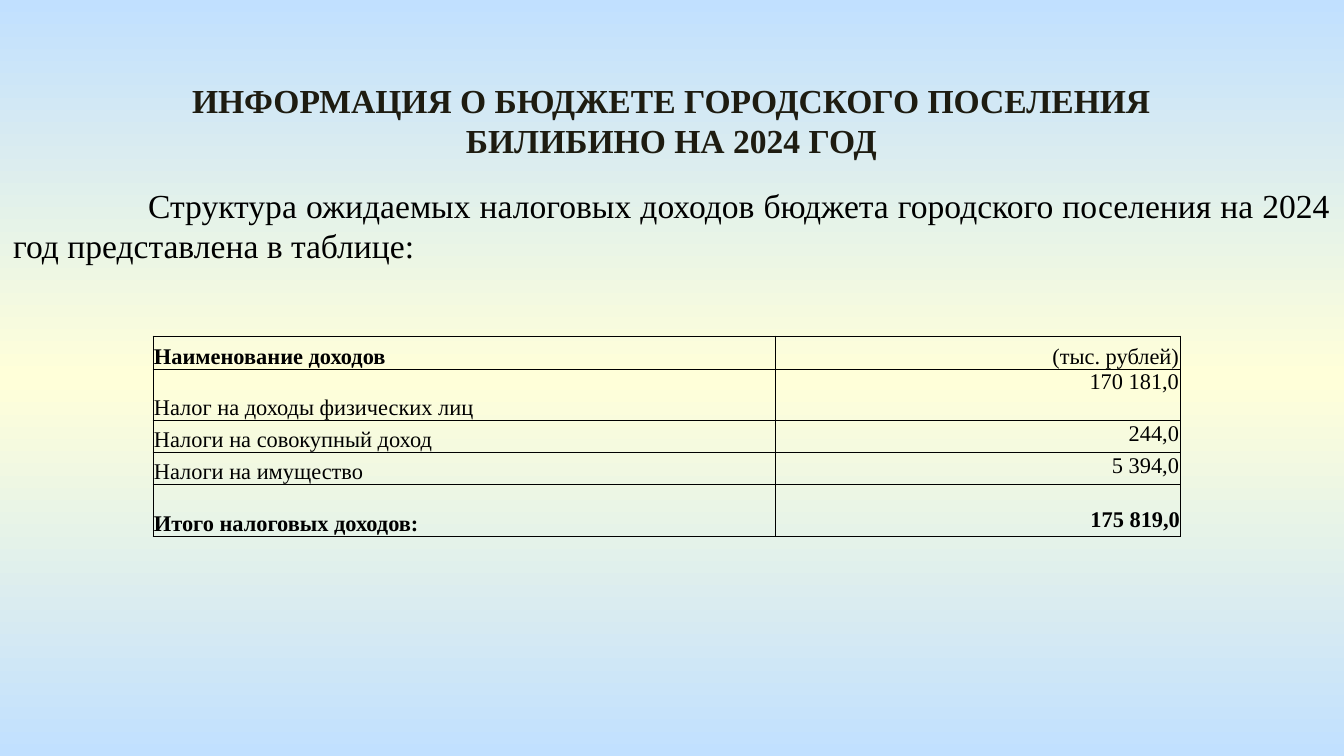
from lxml import etree
from pptx import Presentation
from pptx import util as u
from pptx.dml.color import RGBColor
from pptx.enum import text
from pptx.oxml.ns import qn

# Content
TITLE = "ИНФОРМАЦИЯ О БЮДЖЕТЕ ГОРОДСКОГО ПОСЕЛЕНИЯ БИЛИБИНО НА 2024 ГОД"
INTRO = ("Структура ожидаемых налоговых доходов бюджета городского поселения "
         "на 2024 год представлена в таблице:")
ROWS = [
    ("Наименование доходов", "(тыс. рублей)"),
    ("Налог на доходы физических лиц", "170 181,0"),
    ("Налоги на совокупный доход", "244,0"),
    ("Налоги на имущество", "5 394,0"),
    ("Итого налоговых доходов:", "175 819,0"),
]
BOLD = {(0, 0), (4, 0), (4, 1)}

# Layout in px, 1344 px to the slide width
COLS = [622, 405]
HEIGHTS = [33, 52, 32, 32, 52]
C = {"sky": "C1E0FF", "cream": "FFFFD9", "title": "1E1C11", "ink": "000000"}
FONT = "Times New Roman"
A = text.PP_ALIGN
V = text.MSO_ANCHOR


def px(n):
    return u.Emu(round(n * 914400 / 134.4))


def place(sp, left, top, width, height):
    box = dict(left=left, top=top, width=width, height=height)
    for name, value in box.items():
        setattr(sp, name, px(value))


def write(tf, words, size, align, color="ink", bold=False):
    p = tf.paragraphs[0]
    p.alignment = align
    r = p.add_run()
    r.text = words
    for name, value in dict(name=FONT, size=u.Pt(size), bold=bold).items():
        setattr(r.font, name, value)
    r.font.color.rgb = RGBColor.from_string(C[color])
    return p


def add_color(parent, color):
    etree.SubElement(parent, qn("a:srgbClr"), val=C[color])


def add_borders(cell):
    tcPr = cell._tc.get_or_add_tcPr()
    for i, side in enumerate(("lnL", "lnR", "lnT", "lnB")):
        ln = etree.Element(qn("a:" + side), w=str(u.Pt(0.5)))
        add_color(etree.SubElement(ln, qn("a:solidFill")), "ink")
        tcPr.insert(i, ln)


prs = Presentation()
prs.slide_width, prs.slide_height = px(1344), px(756)
s = prs.slides.add_slide(prs.slide_layouts[5])

# Background gradient
fill = s.background.fill
fill.gradient()
fill.gradient_angle = 90
stops = s.background._cSld.find(".//" + qn("a:gsLst"))
for old in list(stops):
    stops.remove(old)
for percent, color in ((0, "sky"), (50, "cream"), (100, "sky")):
    add_color(etree.SubElement(stops, qn("a:gs"), pos=str(percent * 1000)), color)

# Title and introduction
title = s.shapes.title
place(title, 152, 73, 1039, 95)
title.text_frame.vertical_anchor = V.TOP
title.text_frame.auto_size = text.MSO_AUTO_SIZE.NONE
write(title.text_frame, TITLE, 18, A.CENTER, "title", True)

intro = s.shapes.add_textbox(0, px(178), px(1344), px(95))
intro.text_frame.word_wrap = True
p = write(intro.text_frame, INTRO, 18, A.JUSTIFY)
p._p.get_or_add_pPr().set("indent", str(px(135)))

# Income table
table = s.shapes.add_table(len(ROWS), len(COLS), px(153), px(336),
                           px(sum(COLS)), px(sum(HEIGHTS))).table
table.first_row = table.horz_banding = False
for column, width in zip(table.columns, COLS):
    column.width = px(width)
for i, (row, height) in enumerate(zip(ROWS, HEIGHTS)):
    table.rows[i].height = px(height)
    total = i == len(ROWS) - 1
    for j, words in enumerate(row):
        cell = table.cell(i, j)
        margins = dict(left=1, right=1, top=1, bottom=0)
        if total and j:
            margins.update(right=0, bottom=4)
        for side, value in margins.items():
            setattr(cell, "margin_" + side, px(value))
        cell.vertical_anchor = V.TOP if j and 0 < i and not total else V.BOTTOM
        cell.fill.background()
        add_borders(cell)
        write(cell.text_frame, words, 12, A.RIGHT if j else A.JUSTIFY,
              bold=(i, j) in BOLD)

prs.save("out.pptx")
